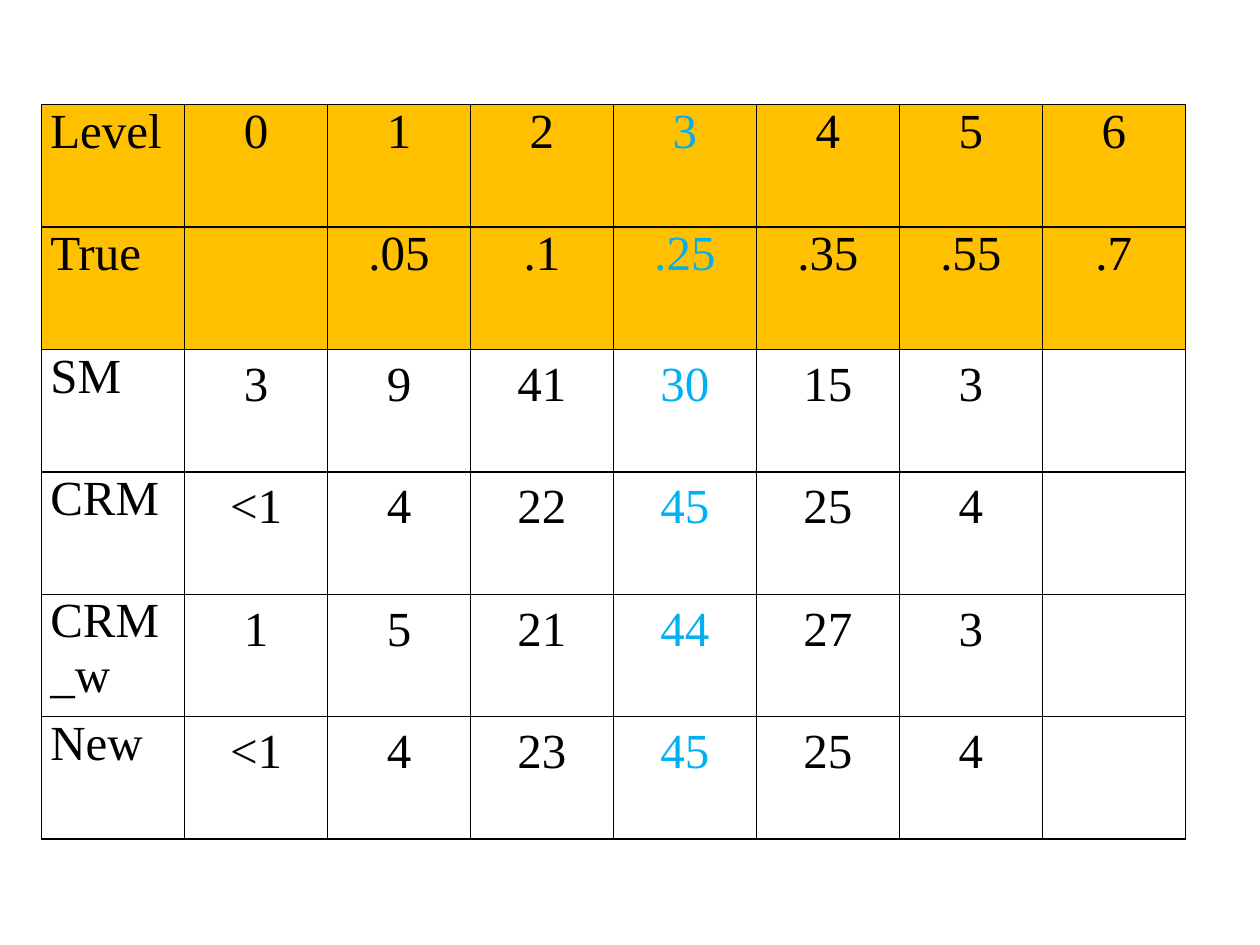
from lxml.etree import SubElement
from pptx import Presentation
from pptx.dml.color import RGBColor
from pptx.enum.text import PP_ALIGN
from pptx.oxml.ns import qn
from pptx.util import Inches, Pt

FONT = "Times New Roman"
BLACK, GOLD, BLUE = "000000", "FFC000", "00B0F0"
HEADER_ROWS = 2
TARGET_COLUMN = 4
ROWS = [
    ["Level", "0", "1", "2", "3", "4", "5", "6"],
    ["True", "", ".05", ".1", ".25", ".35", ".55", ".7"],
    ["SM", "3", "9", "41", "30", "15", "3", ""],
    ["CRM", "<1", "4", "22", "45", "25", "4", ""],
    ["CRM_w", "1", "5", "21", "44", "27", "3", ""],
    ["New", "<1", "4", "23", "45", "25", "4", ""],
]


def color(value):
    return RGBColor.from_string(value)


def draw_borders(cell, value, width):
    properties = cell._tc.get_or_add_tcPr()
    for side in ("a:lnL", "a:lnR", "a:lnT", "a:lnB"):
        line = SubElement(properties, qn(side), w=str(Pt(width)))
        fill = SubElement(line, qn("a:solidFill"))
        SubElement(fill, qn("a:srgbClr"), val=value)


def write_cell(cell, text, row, column):
    cell.margin_left = cell.margin_right = Inches(0.07)
    cell.margin_top = cell.margin_bottom = 0
    para = cell.text_frame.paragraphs[0]
    if column > 0:
        para.alignment = PP_ALIGN.CENTER
        if row >= HEADER_ROWS:
            para.line_spacing = 1.15
    if text:
        span = para.add_run()
        span.text = text
        span.font.name = FONT
        span.font.size = Pt(28)
        span.font.color.rgb = color(BLUE if column == TARGET_COLUMN else BLACK)


def add_results_table(page, left, top, width, height):
    frame = page.shapes.add_table(len(ROWS), len(ROWS[0]), left, top, width, height)
    table = frame.table
    table.first_row = table.horz_banding = False
    for row, values in enumerate(ROWS):
        for column, text in enumerate(values):
            cell = table.cell(row, column)
            draw_borders(cell, BLACK, 1)
            if row < HEADER_ROWS:
                cell.fill.solid()
                cell.fill.fore_color.rgb = color(GOLD)
            else:
                cell.fill.background()
            write_cell(cell, text, row, column)


def main():
    deck = Presentation()
    deck.slide_width, deck.slide_height = Inches(10), Inches(7.5)
    page = deck.slides.add_slide(deck.slide_layouts[6])
    add_results_table(page, Inches(0.33), Inches(0.83), Inches(9.08), Inches(5.83))
    deck.save("out.pptx")


if __name__ == "__main__":
    main()
